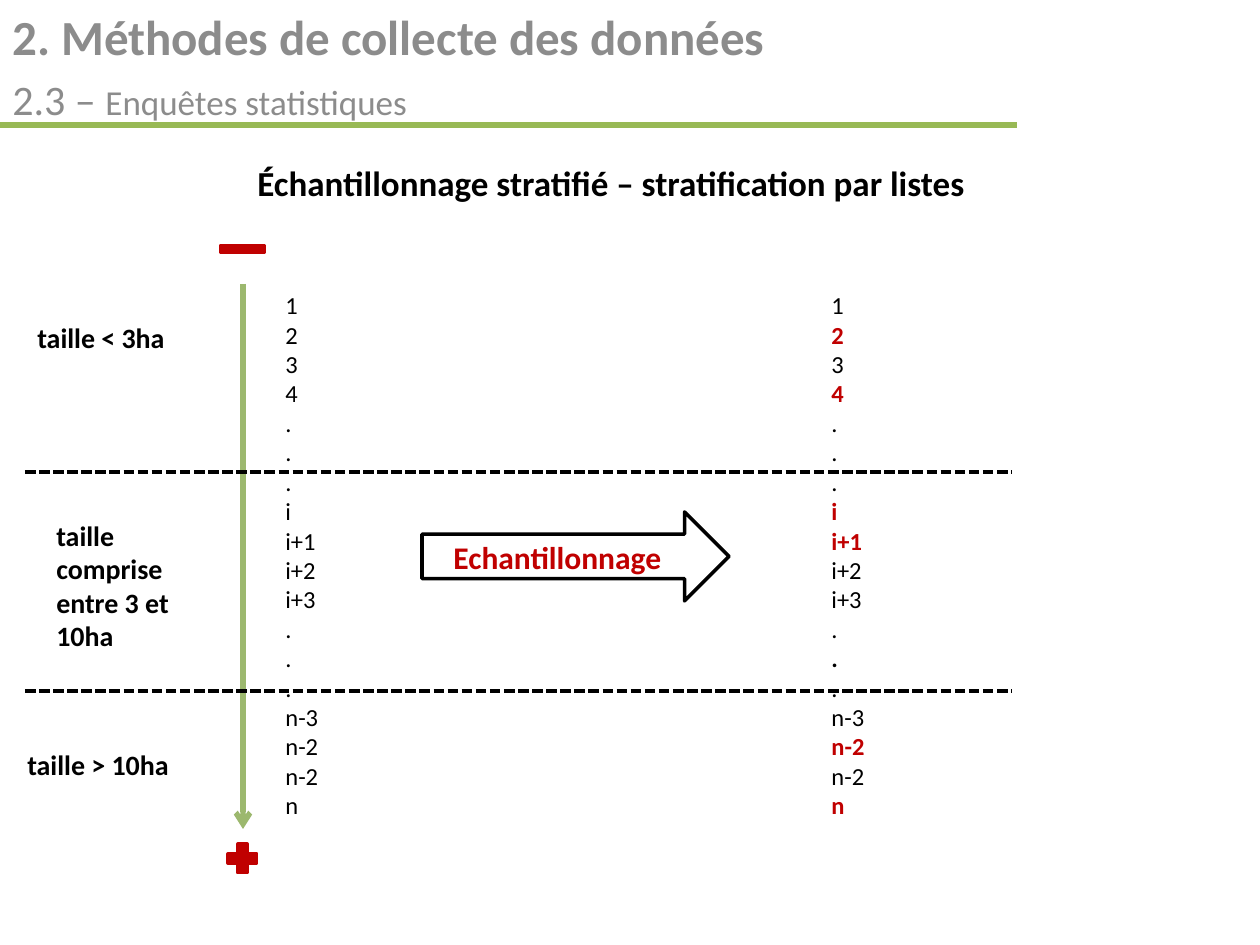
from lxml.etree import SubElement
from pptx import Presentation
from pptx.dml.color import RGBColor
from pptx.enum.dml import MSO_LINE
from pptx.enum.shapes import MSO_CONNECTOR, MSO_SHAPE
from pptx.enum.text import PP_ALIGN
from pptx.oxml.ns import qn
from pptx.util import Emu, Pt

PX = 914400 / 126
COLORS = {
    "heading": "8C8C8C",
    "rule": "98B955",
    "axis": "9CB86E",
    "text": "000000",
    "accent": "C00000",
}


def px(length):
    return Emu(round(length * PX))


def rgb(name):
    return RGBColor.from_string(COLORS[name])


class SlideBuilder:
    font_name = "Calibri"

    def __init__(self, slide):
        self.slide = slide

    def style(self, font, size, color="text", bold=False):
        font.name = self.font_name
        font.size = Pt(size)
        font.bold = bold
        font.color.rgb = rgb(color)

    def text_frame(self, left, top, width, height):
        box = self.slide.shapes.add_textbox(px(left), px(top), px(width), px(height))
        box.text_frame.word_wrap = True
        return box.text_frame

    def text(self, left, top, width, height, text, size, color="text", align=PP_ALIGN.LEFT):
        paragraph = self.text_frame(left, top, width, height).paragraphs[0]
        paragraph.text = text
        paragraph.alignment = align
        self.style(paragraph.font, size, color, bold=True)

    def heading(self, title, number, subtitle):
        frame = self.text_frame(0, 0, 1260, 139)
        first = frame.paragraphs[0]
        first.text = title
        self.style(first.font, 28, "heading", bold=True)
        second = frame.add_paragraph()
        second.space_before = Pt(5)
        for text, size in ((number, 24), (subtitle, 20)):
            run = second.add_run()
            run.text = text
            self.style(run.font, size, "heading")

    def item_list(self, left, items, sampled=(), bold=()):
        frame = self.text_frame(left, 284, 79, 547)
        for index, item in enumerate(items):
            paragraph = frame.add_paragraph() if index else frame.paragraphs[0]
            paragraph.text = item
            color = "accent" if index in sampled else "text"
            self.style(paragraph.font, 14, color, index in sampled or index in bold)

    def line(self, x1, y1, x2, y2, color, width, dash=None, arrow=False):
        connector = self.slide.shapes.add_connector(
            MSO_CONNECTOR.STRAIGHT, px(x1), px(y1), px(x2), px(y2))
        connector.line.color.rgb = rgb(color)
        connector.line.width = Pt(width)
        if dash:
            connector.line.dash_style = dash
        if arrow:
            SubElement(connector.line._get_or_add_ln(), qn("a:tailEnd"), type="arrow")
        SubElement(connector._element.spPr, qn("a:effectLst"))

    def shape(self, kind, left, top, width, height, line, fill=None):
        shape = self.slide.shapes.add_shape(kind, px(left), px(top), px(width), px(height))
        shape.shadow.inherit = False
        if fill:
            shape.fill.solid()
            shape.fill.fore_color.rgb = rgb(fill)
        else:
            shape.fill.background()
        shape.line.color.rgb = rgb(line)
        shape.line.width = Pt(2)


def main():
    presentation = Presentation()
    presentation.slide_width = px(1260)
    presentation.slide_height = px(945)
    builder = SlideBuilder(presentation.slides.add_slide(presentation.slide_layouts[6]))

    # Heading
    builder.heading("2. Méthodes de collecte des données", "2.3 – ", "Enquêtes statistiques")
    builder.line(0, 125, 1017, 125, "rule", 3)
    builder.text(115, 155, 992, 55, "Échantillonnage stratifié – stratification par listes",
                 20, align=PP_ALIGN.CENTER)

    # Size axis, from small to large
    builder.line(243, 284, 243, 829, "axis", 3, arrow=True)
    builder.shape(MSO_SHAPE.MATH_MINUS, 213, 234, 59, 30, "accent", "accent")
    builder.shape(MSO_SHAPE.MATH_PLUS, 223, 839, 39, 39, "accent", "accent")

    # Full list, then the list with the sampled units
    dots = ["."] * 3
    items = ["1", "2", "3", "4", *dots, "i", "i+1", "i+2", "i+3", *dots,
             "n-3", "n-2", "n-2", "n"]
    builder.item_list(273, items)
    builder.item_list(819, items, sampled={1, 3, 7, 8, 15, 17}, bold={12})

    # Strata
    for left, top, height, label in (
        (25, 314, 47, "taille < 3ha"),
        (44, 512, 149, "taille comprise entre 3 et 10ha"),
        (15, 741, 47, "taille > 10ha"),
    ):
        builder.text(left, top, 179, height, label, 16)
    for y in (472, 691):
        builder.line(25, y, 1012, y, "text", 2, dash=MSO_LINE.SQUARE_DOT)

    # Sampling arrow
    builder.shape(MSO_SHAPE.RIGHT_ARROW, 422, 512, 307, 89, "text")
    builder.text(441, 532, 268, 50, "Echantillonnage", 18, "accent")

    presentation.save("out.pptx")


if __name__ == "__main__":
    main()
